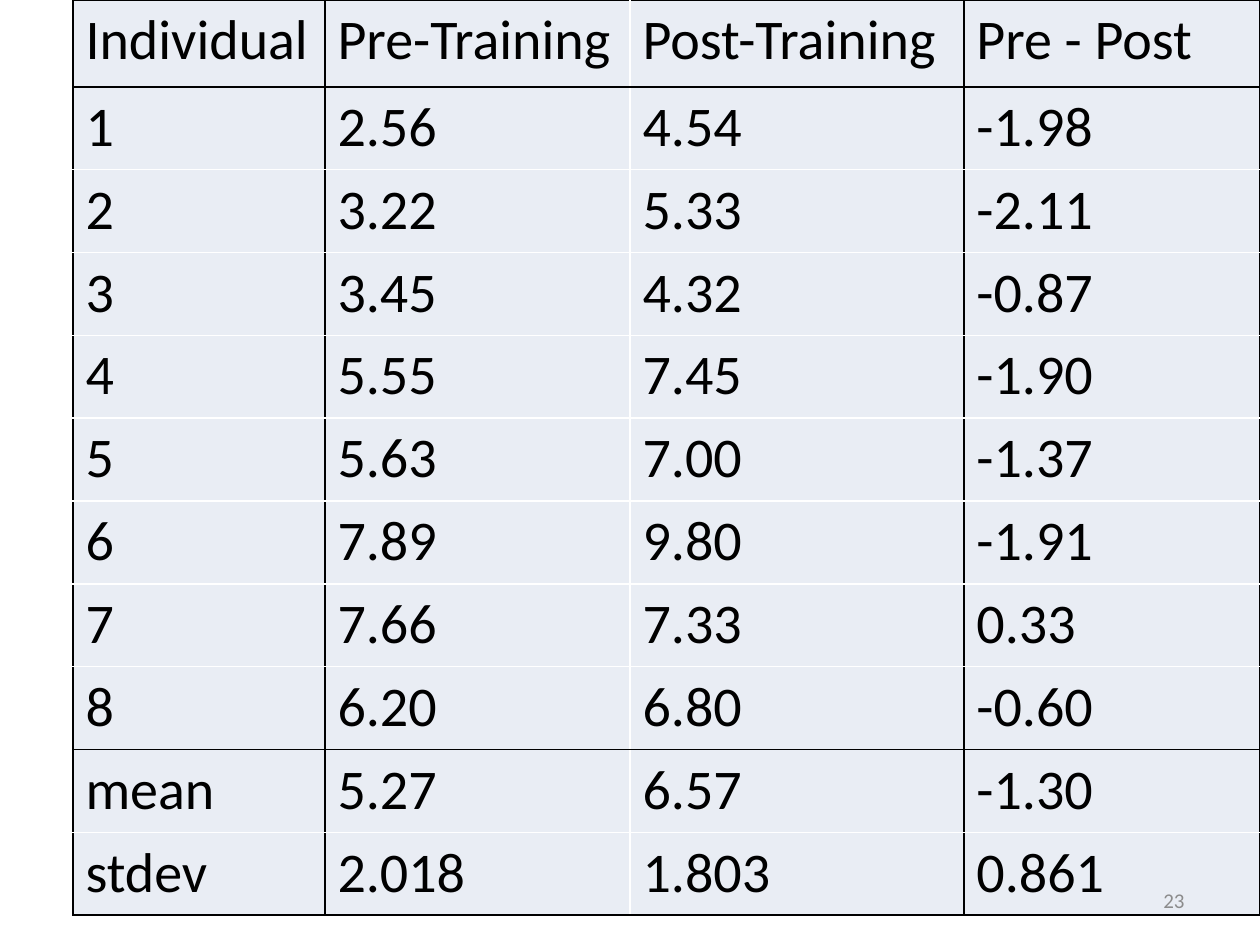
"""Build a slide with a table of training scores and a page number."""
from lxml.etree import SubElement as Sub
from pptx import Presentation as Deck
from pptx.dml.color import RGBColor as Rgb
from pptx.enum.text import MSO_ANCHOR as Anchor, PP_ALIGN as Align
from pptx.oxml.ns import qn
from pptx.util import Cm, Pt

BLACK, WHITE, PALE, GREY = "000000", "FFFFFF", "E9EDF4", "8C8C8C"


def ink(fill, color):
    fill.solid()
    fill.fore_color.rgb = Rgb.from_string(color)


def write(frame, text, size=32, color=BLACK, align=Align.LEFT):
    line = frame.paragraphs[0]
    line.alignment = align
    run = line.add_run()
    run.text = text
    run.font.name = "Calibri"
    run.font.size = Pt(size)
    ink(run.font.fill, color)


rows = [
    ("Individual", "Pre-Training", "Post-Training", "Pre - Post"),
    ("1", "2.56", "4.54", "-1.98"),
    ("2", "3.22", "5.33", "-2.11"),
    ("3", "3.45", "4.32", "-0.87"),
    ("4", "5.55", "7.45", "-1.90"),
    ("5", "5.63", "7.00", "-1.37"),
    ("6", "7.89", "9.80", "-1.91"),
    ("7", "7.66", "7.33", "0.33"),
    ("8", "6.20", "6.80", "-0.60"),
    ("mean", "5.27", "6.57", "-1.30"),
    ("stdev", "2.018", "1.803", "0.861"),
]
wide = [5.08, 6.15, 6.73, 5.97]
high = [1.75] + [1.67] * 10
dark_rows = {0, 1, 9, 11}
dark_cols = {0, 1, 3, 4}

deck = Deck()
deck.slide_width, deck.slide_height = Cm(25.4), Cm(19.05)
slide = deck.slides.add_slide(deck.slide_layouts[6])

grid = slide.shapes.add_table(
    len(rows), len(wide), Cm(1.47), Cm(0), Cm(sum(wide)), Cm(sum(high))
).table
grid.first_row = grid.horz_banding = False
for col, width in zip(grid.columns, wide):
    col.width = Cm(width)
for row, height in zip(grid.rows, high):
    row.height = Cm(height)

for i, row in enumerate(rows):
    for j, text in enumerate(row):
        cell = grid.cell(i, j)
        write(cell.text_frame, text)
        props = cell._tc.get_or_add_tcPr()
        sides = {
            "L": j in dark_cols,
            "R": j + 1 in dark_cols,
            "T": i in dark_rows,
            "B": i + 1 in dark_rows,
        }
        for side, dark in sides.items():
            edge = Sub(props, qn(f"a:ln{side}"), w=str(Pt(1)))
            fill = Sub(edge, qn("a:solidFill"))
            Sub(fill, qn("a:srgbClr"), val=BLACK if dark else WHITE)
        ink(cell.fill, PALE)

page = slide.shapes.add_textbox(Cm(18.2), Cm(17.65), Cm(5.93), Cm(1.01))
page.text_frame.word_wrap = True
page.text_frame.vertical_anchor = Anchor.MIDDLE
write(page.text_frame, "23", size=12, color=GREY, align=Align.RIGHT)

deck.save("out.pptx")
